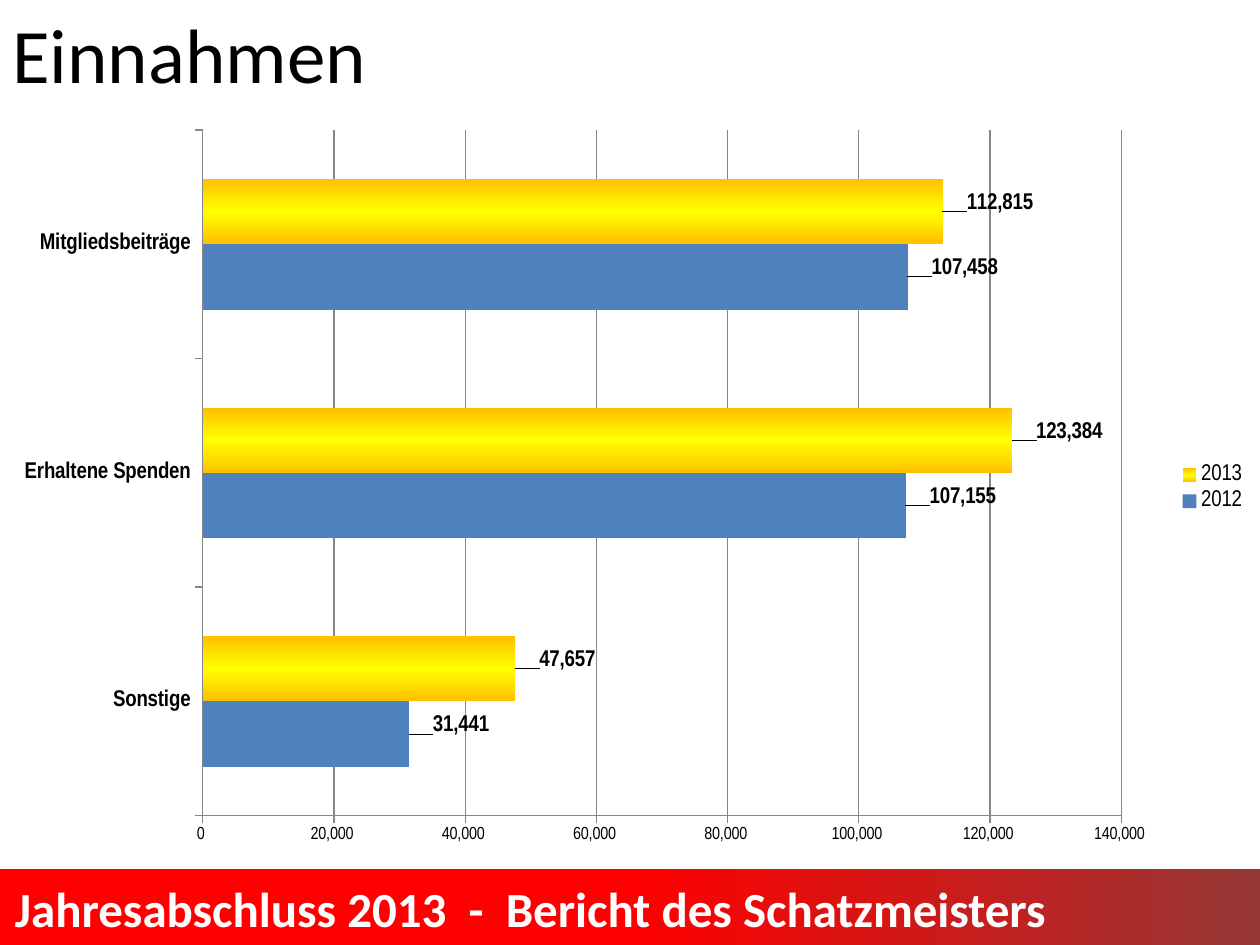
from copy import deepcopy

from lxml.etree import SubElement
from pptx import Presentation
from pptx.chart.data import CategoryChartData
from pptx.dml.color import RGBColor
from pptx.enum.chart import XL_CHART_TYPE, XL_LEGEND_POSITION, XL_TICK_MARK
from pptx.enum.shapes import MSO_SHAPE
from pptx.enum.text import MSO_ANCHOR
from pptx.oxml.ns import qn
from pptx.util import Inches, Pt

BLACK = RGBColor(0x00, 0x00, 0x00)
WHITE = RGBColor(0xFF, 0xFF, 0xFF)
RED = RGBColor(0xFF, 0x00, 0x00)
DARK_RED = RGBColor(0x95, 0x37, 0x35)
BLUE = RGBColor(0x4F, 0x81, 0xBD)
ORANGE = RGBColor(0xFF, 0xC0, 0x00)
YELLOW = RGBColor(0xFF, 0xFF, 0x00)
GREY = RGBColor(0x86, 0x86, 0x86)

AMOUNT_FORMAT = r"#,##0_ ;[Red]\-#,##0\ "
CATEGORIES = ["Sonstige", "Erhaltene Spenden", "Mitgliedsbeiträge"]
INCOME = {
    "2012": [31441, 107155, 107458],
    "2013": [47657, 123384, 112815],
}


def style_font(font, size, name, color=BLACK, bold=False):
    font.size = Pt(size)
    font.name = name
    font.bold = bold
    font.color.rgb = color


def fill_gradient(fill, owner, colors, angle):
    """Spread colors evenly over a linear gradient; owner is the XML element holding it."""
    fill.gradient()
    fill.gradient_angle = angle
    stop_list = owner.xpath(".//a:gsLst")[0]
    while len(stop_list) < len(colors):
        stop_list.append(deepcopy(stop_list[0]))
    for index, (stop, color) in enumerate(zip(fill.gradient_stops, colors)):
        stop.position = index / (len(colors) - 1)
        stop.color.rgb = color


def add_layout(parent, position, **settings):
    """Put a manual layout into a chart element at the given child position."""
    for old in parent.findall(qn("c:layout")):
        parent.remove(old)
    layout = SubElement(parent, qn("c:layout"))
    parent.insert(position, layout)
    manual = SubElement(layout, qn("c:manualLayout"))
    for tag, value in settings.items():
        SubElement(manual, qn(f"c:{tag}")).set("val", str(value))


class SlideBuilder:
    text_font = "Calibri"
    chart_font = "Arial Narrow"

    def __init__(self, slide):
        self.slide = slide

    def add_text(self, text, left, top, width, height, **font_format):
        box = self.slide.shapes.add_textbox(
            Inches(left), Inches(top), Inches(width), Inches(height))
        frame = box.text_frame
        frame.word_wrap = True
        frame.vertical_anchor = MSO_ANCHOR.MIDDLE
        run = frame.paragraphs[0].add_run()
        run.text = text
        style_font(run.font, name=self.text_font, **font_format)

    def add_band(self, left, top, width, height, colors):
        band = self.slide.shapes.add_shape(
            MSO_SHAPE.RECTANGLE,
            Inches(left), Inches(top), Inches(width), Inches(height))
        band.shadow.inherit = False
        band.line.fill.background()
        fill_gradient(band.fill, band._element, colors, 0)

    def add_bar_chart(self, left, top, width, height):
        data = CategoryChartData(number_format=AMOUNT_FORMAT)
        data.categories = CATEGORIES
        for year, amounts in INCOME.items():
            data.add_series(year, amounts)
        chart = self.slide.shapes.add_chart(
            XL_CHART_TYPE.BAR_CLUSTERED,
            Inches(left), Inches(top), Inches(width), Inches(height), data).chart
        style_font(chart.font, 10, self.text_font)
        chart.has_title = False
        chart.has_legend = True
        chart.legend.position = XL_LEGEND_POSITION.RIGHT
        chart.legend.include_in_layout = False
        style_font(chart.legend.font, 13, self.chart_font)
        self.style_axes(chart)

        plot = chart.plots[0]
        plot.gap_width = 150
        plot.overlap = 0
        plot.vary_by_categories = False
        for series in plot.series:
            self.label_bars(series)
        earlier, latest = plot.series
        earlier.format.fill.solid()
        earlier.format.fill.fore_color.rgb = BLUE
        fill_gradient(latest.format.fill, latest._element,
                      [ORANGE, YELLOW, ORANGE], 270)

        plot_area = chart._chartSpace.xpath(".//c:plotArea")[0]
        add_layout(plot_area, 0, layoutTarget="inner", xMode="edge", yMode="edge",
                   x=0.161, y=0.019, w=0.729, h=0.921)

    def style_axes(self, chart):
        categories, amounts = chart.category_axis, chart.value_axis
        style_font(categories.tick_labels.font, 13, self.chart_font, bold=True)
        style_font(amounts.tick_labels.font, 10, self.chart_font)
        amounts.tick_labels.number_format = AMOUNT_FORMAT
        amounts.tick_labels.number_format_is_linked = False
        amounts.minimum_scale = 0
        amounts.maximum_scale = 140000
        amounts.major_unit = 20000
        amounts.has_major_gridlines = True
        categories.has_major_gridlines = False
        for axis in (categories, amounts):
            axis.major_tick_mark = XL_TICK_MARK.OUTSIDE
            axis.minor_tick_mark = XL_TICK_MARK.NONE
        for part in (categories, amounts, amounts.major_gridlines):
            part.format.line.color.rgb = GREY
            part.format.line.width = Pt(0.75)

    def label_bars(self, series):
        """Show each amount a little right of and above its default place."""
        labels = series.data_labels
        labels.show_value = True
        labels.number_format = AMOUNT_FORMAT
        labels.number_format_is_linked = False
        style_font(labels.font, 13, self.chart_font, bold=True)
        for index in range(len(CATEGORIES)):
            style_font(series.points[index].data_label.font, 13,
                       self.chart_font, bold=True)
        for label in series._element.xpath(".//c:dLbl"):
            add_layout(label, 1, x=0.015, y=-0.01)


def main():
    presentation = Presentation()
    presentation.slide_width = Inches(10)
    presentation.slide_height = Inches(7.5)
    builder = SlideBuilder(
        presentation.slides.add_slide(presentation.slide_layouts[6]))
    builder.add_band(0, 6.9, 10, 0.6, [RED, RED, DARK_RED])
    builder.add_text("Jahresabschluss 2013  -  Bericht des Schatzmeisters",
                     0.02, 6.92, 9.79, 0.57, size=28, color=WHITE, bold=True)
    builder.add_text("Einnahmen", 0, 0, 7.56, 0.83, size=44)
    builder.add_bar_chart(0, 0.92, 10, 5.91)
    presentation.save("out.pptx")


if __name__ == "__main__":
    main()
